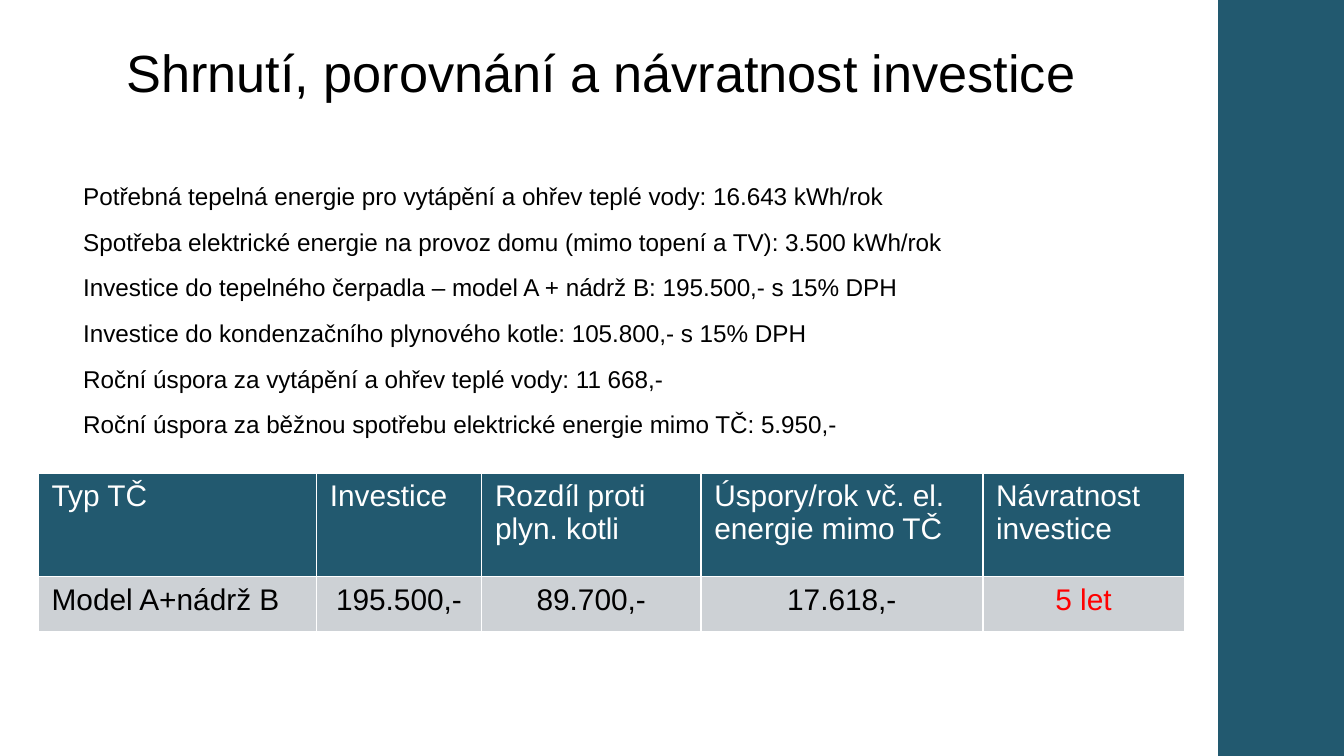
from lxml import etree
from pptx import Presentation
from pptx import util as u
from pptx.dml.color import RGBColor
from pptx.enum import shapes, text
from pptx.oxml.ns import qn

TEAL, GRAY, WHITE, BLACK, RED = "22596F", "CDD1D5", "FFFFFF", "000000", "FF0000"
SLIDE_WIDTH, SLIDE_HEIGHT = 720, 405

TITLE = "Shrnutí, porovnání a návratnost investice"
FACTS = [
    "Potřebná tepelná energie pro vytápění a ohřev teplé vody: 16.643 kWh/rok",
    "Spotřeba elektrické energie na provoz domu (mimo topení a TV): 3.500 kWh/rok",
    "Investice do tepelného čerpadla – model A + nádrž B: 195.500,- s 15% DPH",
    "Investice do kondenzačního plynového kotle: 105.800,- s 15% DPH",
    "Roční úspora za vytápění a ohřev teplé vody: 11 668,-",
    "Roční úspora za běžnou spotřebu elektrické energie mimo TČ: 5.950,-",
]
HEADERS = ["Typ TČ", "Investice", "Rozdíl proti plyn. kotli",
           "Úspory/rok vč. el. energie mimo TČ", "Návratnost\vinvestice"]
VALUES = ["Model A+nádrž B", "195.500,-", "89.700,-", "17.618,-", "5 let"]
COLUMN_WIDTHS = [149, 88.5, 117.5, 151, 108]
ROW_HEIGHTS = [55.4, 29.5]


def color(value):
    return RGBColor.from_string(value)


def fill_solid(item, value):
    item.fill.solid()
    item.fill.fore_color.rgb = color(value)


def write_text(frame, content, size=16, fill=BLACK, align=text.PP_ALIGN.LEFT,
               line_spacing=1.0, space_after=0):
    frame.text = content
    for paragraph in frame.paragraphs:
        properties = paragraph._p.get_or_add_pPr()
        properties.set("marL", "0")
        properties.set("indent", "0")
        etree.SubElement(properties, qn("a:buNone"))
        paragraph.alignment = align
        paragraph.line_spacing = line_spacing
        paragraph.space_before = u.Pt(0)
        paragraph.space_after = u.Pt(space_after)
        for run in paragraph.runs:
            run.font.name = "Arial"
            run.font.size = u.Pt(size)
            run.font.color.rgb = color(fill)


def place_placeholder(shape, left, top, width, height, margins):
    shape.left, shape.top = u.Pt(left), u.Pt(top)
    shape.width, shape.height = u.Pt(width), u.Pt(height)
    frame = shape.text_frame
    frame.word_wrap = True
    frame.auto_size = text.MSO_AUTO_SIZE.NONE
    frame.vertical_anchor = text.MSO_ANCHOR.TOP
    (frame.margin_left, frame.margin_top,
     frame.margin_right, frame.margin_bottom) = map(u.Pt, margins)
    return frame


def add_side_band(slide, left, top, width, height):
    band = slide.shapes.add_shape(shapes.MSO_SHAPE.RECTANGLE, u.Pt(left), u.Pt(top),
                                  u.Pt(width), u.Pt(height))
    band.shadow.inherit = False
    fill_solid(band, TEAL)
    band.line.fill.background()


def fill_title(slide, left, top, width, height):
    frame = place_placeholder(slide.shapes.title, left, top, width, height,
                              (7.2, 6.6, 7.2, 3.6))
    write_text(frame, TITLE, size=28)


def fill_facts(slide, left, top, width, height):
    frame = place_placeholder(slide.placeholders[1], left, top, width, height,
                              (0, 0, 0, 0))
    write_text(frame, "\n".join(FACTS), size=13, line_spacing=1.5, space_after=1)


def set_borders(cell, value, width):
    properties = cell._tc.get_or_add_tcPr()
    for index, side in enumerate(("lnL", "lnR", "lnT", "lnB")):
        line = etree.Element(qn("a:" + side), w=str(u.Pt(width)))
        solid = etree.SubElement(line, qn("a:solidFill"))
        etree.SubElement(solid, qn("a:srgbClr"), val=value)
        properties.insert(index, line)


def add_payback_table(slide, left, top):
    table = slide.shapes.add_table(
        2, len(HEADERS), u.Pt(left), u.Pt(top),
        u.Pt(sum(COLUMN_WIDTHS)), u.Pt(sum(ROW_HEIGHTS))).table
    for column, width in zip(table.columns, COLUMN_WIDTHS):
        column.width = u.Pt(width)
    for row, height in zip(table.rows, ROW_HEIGHTS):
        row.height = u.Pt(height)
    for index, (header, value) in enumerate(zip(HEADERS, VALUES)):
        head_cell, value_cell = table.cell(0, index), table.cell(1, index)
        write_text(head_cell.text_frame, header, fill=WHITE)
        write_text(value_cell.text_frame, value,
                   fill=RED if value == VALUES[-1] else BLACK,
                   align=text.PP_ALIGN.CENTER if index else text.PP_ALIGN.LEFT)
        for cell, background in ((head_cell, TEAL), (value_cell, GRAY)):
            fill_solid(cell, background)
            set_borders(cell, WHITE, 1)


def main():
    presentation = Presentation()
    presentation.slide_width = u.Pt(SLIDE_WIDTH)
    presentation.slide_height = u.Pt(SLIDE_HEIGHT)
    slide = presentation.slides.add_slide(presentation.slide_layouts[1])
    add_side_band(slide, 652.5, 0, 67.5, SLIDE_HEIGHT)
    fill_title(slide, 60.5, 15, 638.5, 85)
    add_payback_table(slide, 20.5, 253.5)
    fill_facts(slide, 44.6, 89.5, 515.5, 117.5)
    presentation.save("out.pptx")


if __name__ == "__main__":
    main()
